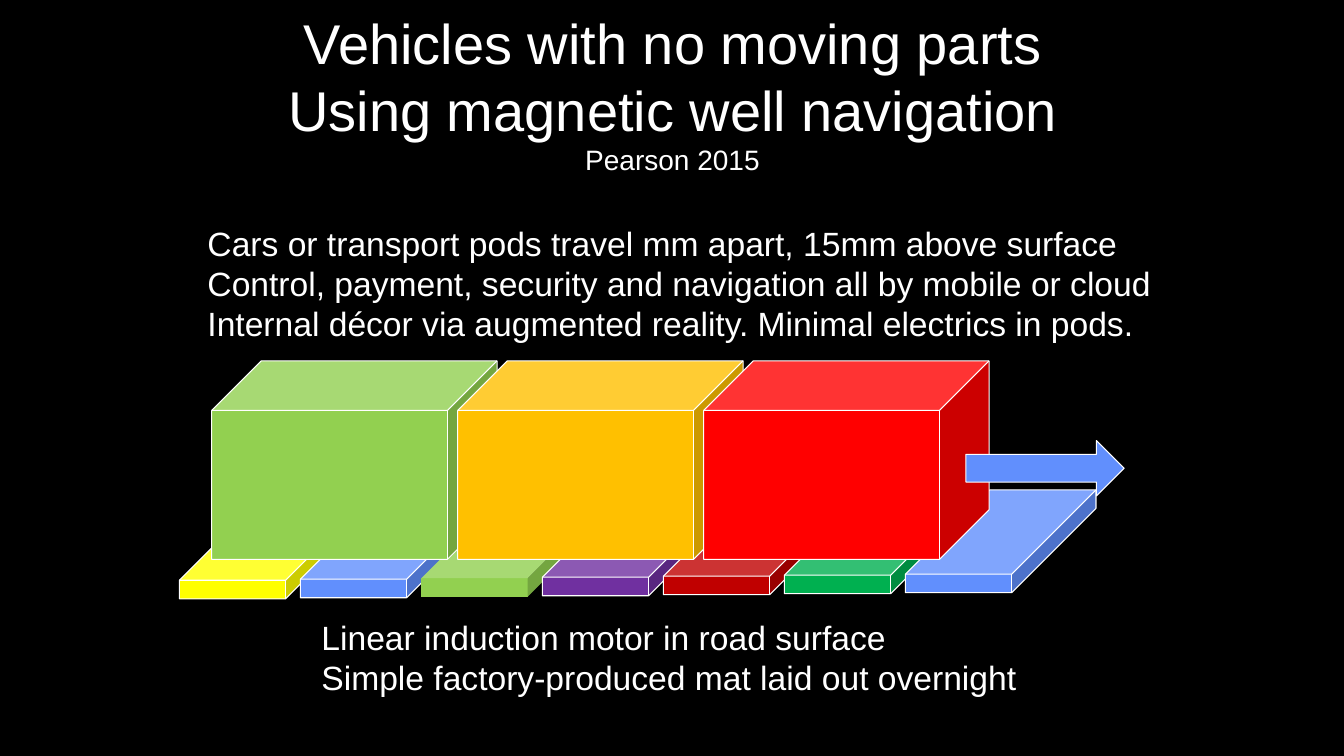
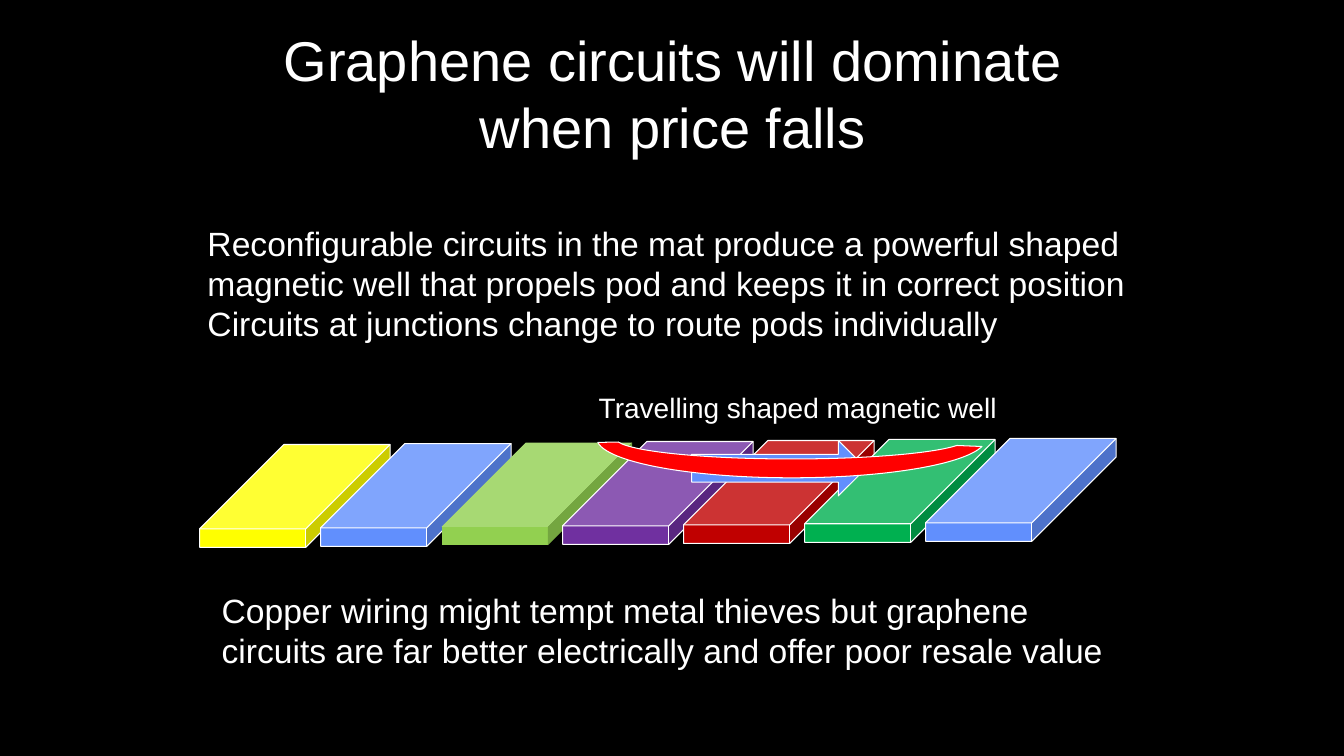
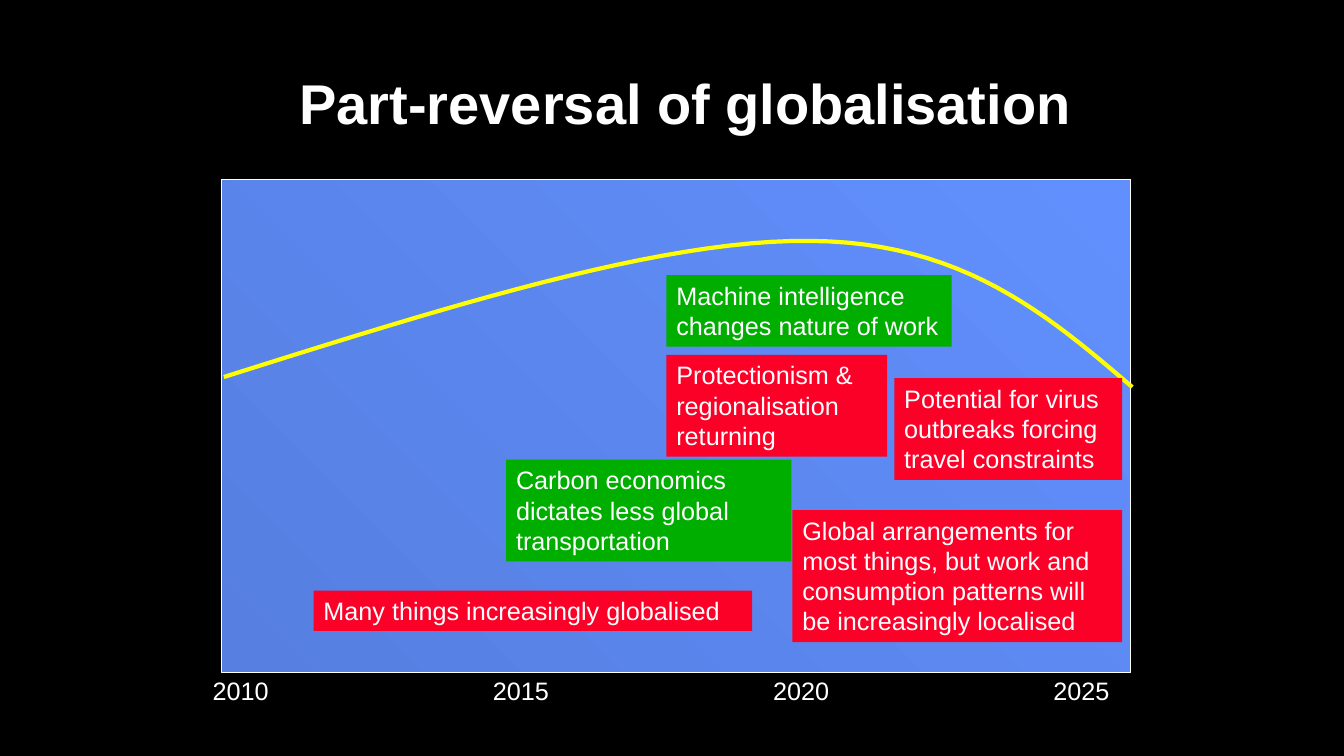
from copy import deepcopy

from pptx import Presentation
from pptx.dml.color import RGBColor
from pptx.enum.shapes import MSO_SHAPE as SHAPE
from pptx.enum.text import MSO_ANCHOR as ANCHOR, MSO_AUTO_SIZE as AUTO, PP_ALIGN as ALIGN
from pptx.oxml.ns import qn
from pptx.util import Inches, Pt

BLACK = RGBColor(0x00, 0x00, 0x00)
WHITE = RGBColor(0xFF, 0xFF, 0xFF)
YELLOW = RGBColor(0xFF, 0xFF, 0x00)
BLUE = RGBColor(0x61, 0x8F, 0xFD)
DEEP_BLUE = RGBColor(0x56, 0x7F, 0xE1)
LIME = RGBColor(0x92, 0xD0, 0x50)
PURPLE = RGBColor(0x70, 0x30, 0xA0)
DARK_RED = RGBColor(0xC0, 0x00, 0x00)
GREEN = RGBColor(0x00, 0xB0, 0x50)
AMBER = RGBColor(0xFF, 0xC0, 0x00)
RED = RGBColor(0xFF, 0x00, 0x00)
CALLOUT_RED = RGBColor(0xFC, 0x01, 0x28)
CALLOUT_GREEN = RGBColor(0x00, 0xAE, 0x00)

FONT = "Arial"
TITLE_BOX = (2.42, 0.29, 8.5, 1.25)
TITLE_INSETS = {"margin_left": 0.08, "margin_top": 0.04,
                "margin_right": 0.08, "margin_bottom": 0.04}
INTRO_LEFT, INTRO_TOP = 1.96, 2.16
MAT_COLOURS = (YELLOW, BLUE, LIME, PURPLE, DARK_RED, GREEN, BLUE)
POD_COLOURS = (LIME, AMBER, RED)
PANEL = (2.2, 1.78, 9.01, 4.89)


def emu(box):
    return [Inches(v) for v in box]


def add_run(p, text, size, bold=None):
    r = p.add_run()
    r.text = text
    for name, value in {"name": FONT, "size": Pt(size), "bold": bold}.items():
        setattr(r.font, name, value)
    r.font.color.rgb = WHITE
    return r


def add_title(s, lines, box=TITLE_BOX, insets=None, bold=None):
    """Fill the title with (text, size) lines of one paragraph."""
    title = s.shapes.title
    title.left, title.top, title.width, title.height = emu(box)
    tf = title.text_frame
    tf.word_wrap, tf.auto_size = True, AUTO.NONE
    tf.vertical_anchor = ANCHOR.MIDDLE
    for name, value in (insets or {}).items():
        setattr(tf, name, Inches(value))
    p = tf.paragraphs[0]
    p.alignment = ALIGN.CENTER
    r = None
    for text, size in lines:
        if r is not None:
            # A line break takes the size of the line it ends.
            p.add_line_break()
            p._p.findall(qn("a:br"))[-1].append(deepcopy(r._r.rPr))
        r = add_run(p, text, size, bold)


def write(tf, lines, size, wrap=True):
    tf.word_wrap, tf.auto_size = wrap, AUTO.SHAPE_TO_FIT_TEXT
    tf.vertical_anchor = ANCHOR.TOP
    for i, line in enumerate(lines):
        p = tf.add_paragraph() if i else tf.paragraphs[0]
        p.alignment = ALIGN.LEFT
        add_run(p, line, size)


def add_text(shapes, box, lines, size=24, wrap=True):
    write(shapes.add_textbox(*emu(box)).text_frame, lines, size, wrap)


def add_solid(s, kind, box, fill=None, outlined=True, adjust=()):
    sp = s.shapes.add_shape(kind, *emu(box))
    sp.shadow.inherit = False
    for i, value in enumerate(adjust):
        sp.adjustments[i] = value
    if fill is not None:
        sp.fill.solid()
        sp.fill.fore_color.rgb = fill
    if outlined:
        sp.line.color.rgb = WHITE
        sp.line.width = Pt(0.75)
    else:
        sp.line.fill.background()
    return sp


def add_mat(s, left, top):
    """Row of road tiles, each a little higher than the one before."""
    for i, colour in enumerate(MAT_COLOURS):
        box = (left + 1.2 * i, top - 0.01 * i, 1.89, 1.02)
        add_solid(s, SHAPE.CUBE, box, colour, colour != LIME, (0.82,))


def add_pods(s, left, top):
    for i, colour in enumerate(POD_COLOURS):
        add_solid(s, SHAPE.CUBE, (left + 2.44 * i, top, 2.83, 1.97), colour)


def add_arrow(s, left, width):
    add_solid(s, SHAPE.RIGHT_ARROW, (left, 4.37, width, 0.55), BLUE)


def bezier(a, b, c, d, steps=24):
    """Points on a cubic curve after its start."""
    for i in range(1, steps + 1):
        t = i / steps
        u = 1 - t
        yield tuple(u**3 * k + 3 * u * u * t * m + 3 * u * t * t * n + t**3 * q
                    for k, m, n, q in zip(a, b, c, d))


def add_trend(s, left, top):
    """Rise and fall of globalisation, from the panel's corner."""
    start, peak, end = (0.02, 1.96), (5.84, 0.61), (9.03, 2.06)
    points = [*bezier(start, (2.18, 1.28), (4.34, 0.59), peak),
              *bezier(peak, (7.34, 0.62), (8.19, 1.34), end)]
    to_slide = [(Inches(left + x), Inches(top + y)) for x, y in [start, *points]]
    builder = s.shapes.build_freeform(*to_slide[0])
    builder.add_line_segments(to_slide[1:], close=False)
    sp = builder.convert_to_shape()
    sp.shadow.inherit = False
    sp.fill.background()
    sp.line.color.rgb = YELLOW
    sp.line.width = Pt(3)


def add_panel(s, box):
    panel = add_solid(s, SHAPE.RECTANGLE, box)
    panel.fill.gradient()
    panel.fill.gradient_angle = 45
    for stop, colour in zip(panel.fill.gradient_stops, (DEEP_BLUE, BLUE)):
        stop.color.rgb = colour


def add_years(s, left, top):
    years = s.shapes.add_group_shape()
    for i in range(4):
        add_text(years.shapes, (left + 2.78 * i, top, 0.76, 0.4),
                 [str(2010 + 5 * i)], 18, wrap=False)


def add_callouts(s, left, top):
    """Boxes of text, placed from the panel's corner."""
    callouts = (
        (5.66, 3.28, 3.27, 1.31, CALLOUT_RED,
         "Global arrangements for most things, but work and consumption "
         "patterns will be increasingly localised"),
        (0.91, 4.08, 4.35, 0.4, CALLOUT_RED, "Many things increasingly globalised"),
        (4.41, 0.95, 2.83, 0.71, CALLOUT_GREEN,
         "Machine intelligence changes nature of work"),
        (2.82, 2.78, 2.83, 1.01, CALLOUT_GREEN,
         "Carbon economics dictates less global transportation"),
        (6.67, 1.97, 2.26, 1.01, CALLOUT_RED,
         "Potential for virus outbreaks forcing travel constraints"),
        (4.41, 1.74, 2.19, 1.01, CALLOUT_RED,
         "Protectionism & regionalisation returning"),
    )
    for x, y, width, height, colour, text in callouts:
        sp = add_solid(s, SHAPE.RECTANGLE, (left + x, top + y, width, height),
                       colour, outlined=False)
        write(sp.text_frame, [text], 18)


def vehicles_slide(s):
    add_title(s, [("Vehicles with no moving parts", 40),
                  ("Using magnetic well navigation", 40),
                  ("Pearson 2015", 20)], insets=TITLE_INSETS)
    add_text(s.shapes, (3.09, 6.07, 7.17, 0.91),
             ["Linear induction motor in road surface",
              "Simple factory-produced mat laid out overnight"], wrap=False)
    add_mat(s, 1.78, 4.92)
    add_pods(s, 2.1, 3.58)
    add_arrow(s, 9.58, 1.57)
    add_text(s.shapes, (INTRO_LEFT, INTRO_TOP, 9.57, 1.31),
             ["Cars or transport pods travel mm apart, 15mm above surface",
              "Control, payment, security and navigation all by mobile or cloud",
              "Internal décor via augmented reality. Minimal electrics in pods."],
             wrap=False)


def graphene_slide(s):
    add_title(s, [("Graphene circuits will dominate when price falls", 40)],
              insets=TITLE_INSETS)
    add_text(s.shapes, (2.1, 5.8, 9.13, 0.91),
             ["Copper wiring might tempt metal thieves but graphene circuits are "
              "far better electrically and offer poor resale value"])
    add_mat(s, 1.98, 4.41)
    add_arrow(s, 6.86, 1.73)
    add_text(s.shapes, (INTRO_LEFT, INTRO_TOP, 9.43, 1.31),
             ["Reconfigurable circuits in the mat produce a powerful shaped magnetic "
              "well that propels pod and keeps it in correct position",
              "Circuits at junctions change to route pods individually"])
    well = add_solid(s, SHAPE.BLOCK_ARC, (5.92, 3.96, 3.86, 0.78), RED,
                     adjust=(109.44, 215.31, 0.24))
    well.rotation = 180
    add_text(s.shapes, (5.84, 3.83, 4.17, 0.44),
             ["Travelling shaped magnetic well"], 20, wrap=False)


def globalisation_slide(s):
    left, top, _, height = PANEL
    add_panel(s, PANEL)
    add_title(s, [("Part-reversal of globalisation", 40)],
              (2.17, 0.39, 9.25, 1.25), bold=True)
    add_years(s, left - 0.19, top + height - 0.02)
    add_trend(s, left, top)
    add_callouts(s, left, top)


def main():
    prs = Presentation()
    prs.slide_width, prs.slide_height = Inches(13.33), Inches(7.5)
    backdrop = prs.slide_master.background.fill
    backdrop.solid()
    backdrop.fore_color.rgb = BLACK
    for build in (vehicles_slide, graphene_slide, globalisation_slide):
        build(prs.slides.add_slide(prs.slide_layouts[5]))
    prs.save("out.pptx")


if __name__ == "__main__":
    main()
